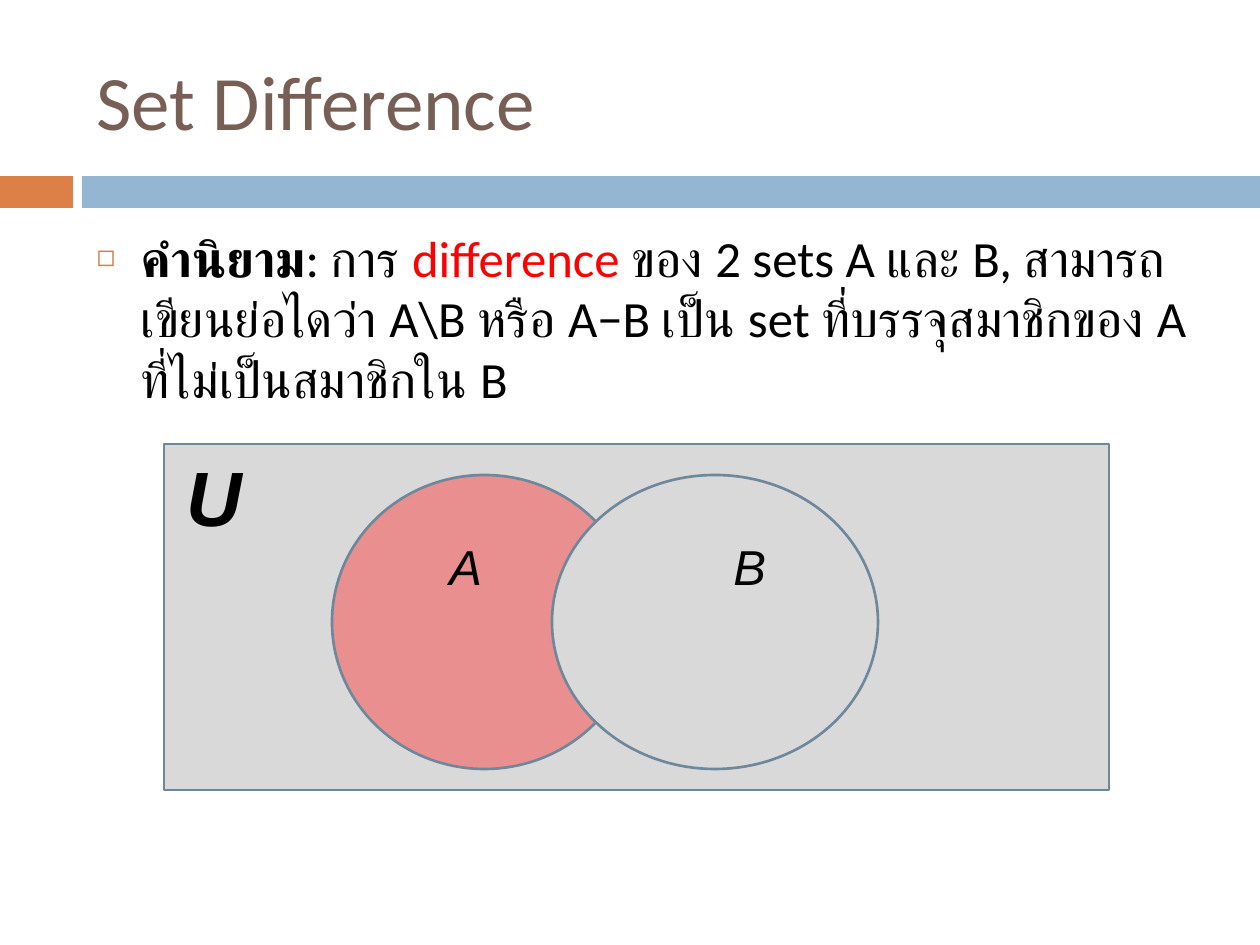
from lxml.etree import SubElement
from pptx import Presentation
from pptx.dml.color import RGBColor
from pptx.enum.shapes import MSO_SHAPE
from pptx.enum.text import MSO_ANCHOR, MSO_AUTO_SIZE, PP_ALIGN
from pptx.oxml.ns import qn
from pptx.util import Emu, Pt

SCALE = 914400 / 126
EDGE = "6D879B"
GREY = "D9D9D9"
ROSE = "E98F8F"
ORANGE = "DD8047"
BLUE = "94B6D2"
BROWN = "775F55"


def px(size):
    """Turn px into EMU."""
    return Emu(round(size * SCALE))


def tint(code):
    """Turn a hex string into a colour."""
    return RGBColor.from_string(code)


def place(item, box):
    """Move an item to a box of left, top, width and height."""
    item.left, item.top, item.width, item.height = map(px, box)


def write(para, text, size, color="000000", font="Calibri", bold=False, italic=False):
    """Add a formatted run to a paragraph."""
    run = para.add_run()
    run.text = text
    face = run.font
    face.name, face.size, face.bold, face.italic = font, Pt(size), bold, italic
    face.color.rgb = tint(color)


def shape(slide, kind, box, fill, line=None):
    """Draw a flat shape."""
    item = slide.shapes.add_shape(kind, *map(px, box))
    item.shadow.inherit = False
    item.fill.solid()
    item.fill.fore_color.rgb = tint(fill)
    if line:
        item.line.color.rgb = tint(line)
        item.line.width = Pt(1.5)
    else:
        item.line.fill.background()


def label(slide, box, text, size, bold=False):
    """Add an italic set name."""
    frame = slide.shapes.add_textbox(*map(px, box)).text_frame
    frame.word_wrap = True
    write(frame.paragraphs[0], text, size, font="Arial", bold=bold, italic=True)


def band(slide, box):
    """Draw the two-part rule under the title."""
    left, top, width, height = box
    tab, gap = 73, 9
    start = tab + gap
    shape(slide, MSO_SHAPE.RECTANGLE, (left, top, tab, height), ORANGE)
    shape(slide, MSO_SHAPE.RECTANGLE, (left + start, top, width - start, height), BLUE)


def head(slide, box, text):
    """Fill the title."""
    title = slide.shapes.title
    place(title, box)
    frame = title.text_frame
    frame.auto_size = MSO_AUTO_SIZE.NONE
    frame.vertical_anchor = MSO_ANCHOR.MIDDLE
    para = frame.paragraphs[0]
    para.alignment = PP_ALIGN.LEFT
    write(para, text, 44, color=BROWN)


def bullet(para, mark, color, share):
    """Give a paragraph a hanging bullet."""
    props = para._p.get_or_add_pPr()
    props.set("marL", str(px(44)))
    props.set("indent", str(-px(44)))
    hue = SubElement(props, qn("a:buClr"))
    SubElement(hue, qn("a:srgbClr"), val=color)
    SubElement(props, qn("a:buSzPct"), val=str(share * 1000))
    SubElement(props, qn("a:buChar"), char=mark)


def body(slide, box, parts):
    """Fill the body with one bullet made of formatted parts."""
    holder = slide.placeholders[1]
    place(holder, box)
    frame = holder.text_frame
    frame.auto_size = MSO_AUTO_SIZE.NONE
    para = frame.paragraphs[0]
    para.space_before = Pt(7)
    bullet(para, "◻", ORANGE, 60)
    for text, form in parts:
        write(para, text, 29, **form)


def venn(slide, box):
    """Draw set A less set B inside the universe."""
    left, top, width, height = box
    shape(slide, MSO_SHAPE.RECTANGLE, box, GREY, EDGE)
    label(slide, (left + 10, top - 1, 73, 106), "U", 44, bold=True)
    rings = [("A", 168, 305, 273, ROSE), ("B", 388, 326, 557, GREY)]
    for name, start, span, inset, fill in rings:
        shape(slide, MSO_SHAPE.OVAL, (left + start, top + 31, span, 294), fill, EDGE)
    for name, start, span, inset, fill in rings:
        label(slide, (left + inset, top + 86, 53, 72), name, 28)


def main():
    """Build and save the slide."""
    deck = Presentation()
    deck.slide_width, deck.slide_height = px(1260), px(945)
    slide = deck.slides.add_slide(deck.slide_layouts[1])
    band(slide, (0, 176, 1260, 32))
    head(slide, (84, 32, 1124, 136), "Set Difference")
    body(slide, (84, 220, 1124, 620), [
        ("คำนิยาม", {"bold": True}),
        (": การ ", {}),
        ("difference ", {"color": "FF0000"}),
        ("ของ 2 sets A และ B, สามารถเขียนย่อไดว่า A\\B หรือ A−B เป็น set "
         "ที่บรรจุสมาชิกของ A ที่ไม่เป็นสมาชิกใน B", {}),
    ])
    venn(slide, (164, 444, 945, 346))
    deck.save("out.pptx")


if __name__ == "__main__":
    main()
